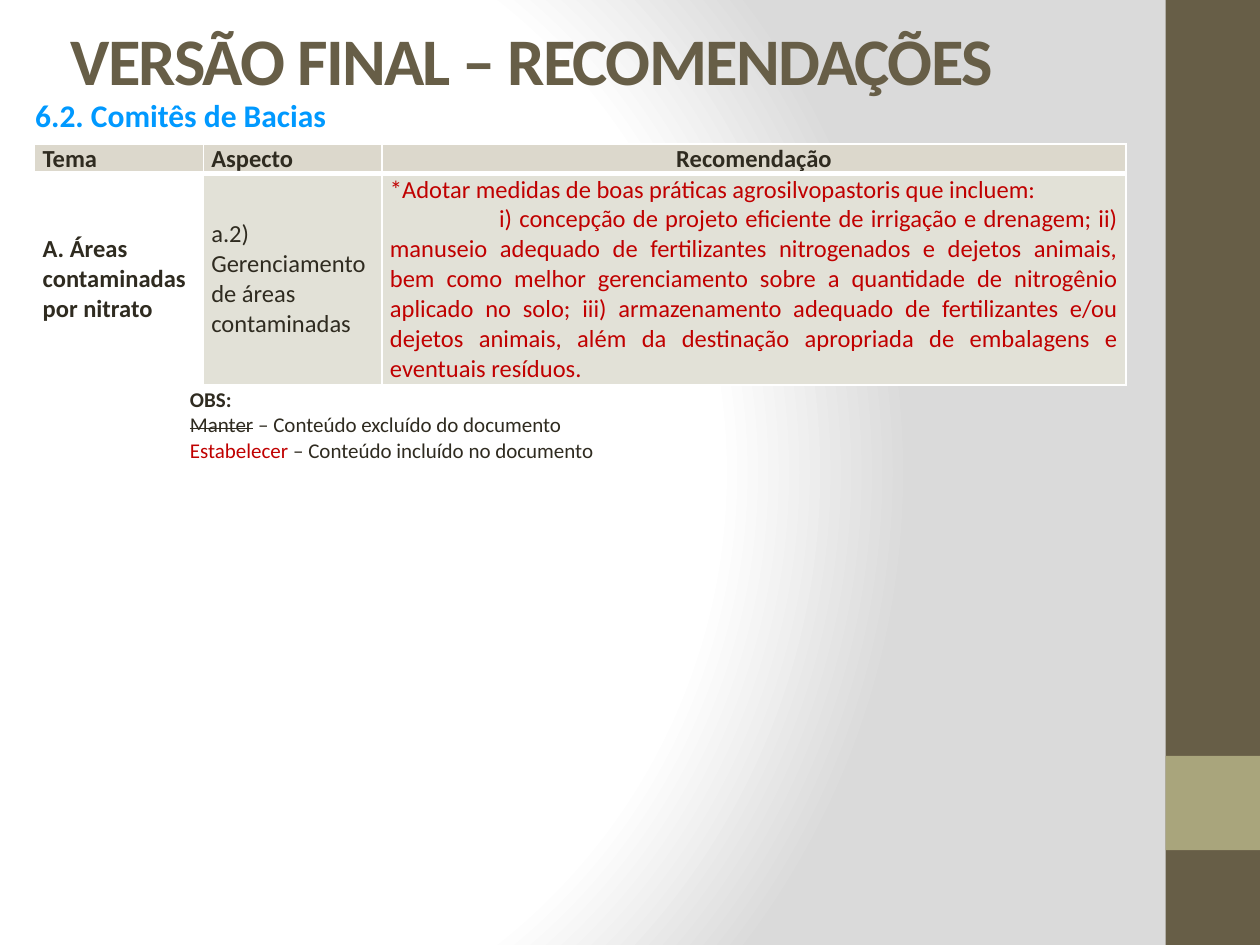
from dataclasses import dataclass

from lxml.etree import SubElement
from pptx import Presentation
from pptx.dml.color import RGBColor
from pptx.enum.shapes import MSO_SHAPE
from pptx.enum.text import MSO_ANCHOR, MSO_AUTO_SIZE, PP_ALIGN
from pptx.oxml import parse_xml
from pptx.oxml.ns import nsdecls, qn
from pptx.util import Cm, Pt


@dataclass(frozen=True)
class Theme:
    font: str = "Calibri"
    white: str = "FFFFFF"
    shade: str = "DADADA"
    brown: str = "675E47"
    olive: str = "A9A57C"
    blue: str = "0099FF"
    ink: str = "2F2B20"
    red: str = "C00000"
    header: str = "DCD8CC"
    band: str = "E2E1D7"
    title: int = 38
    subtitle: int = 18
    body: int = 14
    note: int = 12


class SlideBuilder:
    def __init__(self, s, theme):
        self.s = s
        self.theme = theme

    def background(self):
        t = self.theme
        self.s.background.fill.solid()
        bg = self.s.element.find(".//" + qn("p:bgPr"))
        stops = "".join(
            f'<a:gs pos="{pos * 1000}"><a:srgbClr val="{color}"/></a:gs>'
            for pos, color in ((0, t.white), (75, t.white), (100, t.shade))
        )
        bg.replace(bg[0], parse_xml(
            f'<a:gradFill {nsdecls("a")} rotWithShape="1"><a:gsLst>{stops}</a:gsLst>'
            '<a:path path="circle"><a:fillToRect l="20000" t="50000" r="100000" b="50000"/>'
            '</a:path></a:gradFill>'
        ))

    def format(self, r, size, color, bold=False):
        f = r.font
        f.name, f.size, f.bold = self.theme.font, Pt(size), bold
        f.color.rgb = RGBColor.from_string(color)

    def block(self, x, y, w, h, color):
        sp = self.s.shapes.add_shape(MSO_SHAPE.RECTANGLE, Cm(x), Cm(y), Cm(w), Cm(h))
        sp.shadow.inherit = False
        sp.fill.solid()
        sp.fill.fore_color.rgb = RGBColor.from_string(color)
        sp.line.fill.background()

    def title(self, text, x, y, w, h):
        sp = self.s.shapes.title
        sp.left, sp.top, sp.width, sp.height = Cm(x), Cm(y), Cm(w), Cm(h)
        tf = sp.text_frame
        tf.text = text
        tf.vertical_anchor = MSO_ANCHOR.MIDDLE
        p = tf.paragraphs[0]
        p.alignment = PP_ALIGN.LEFT
        r = p.runs[0]
        self.format(r, self.theme.title, self.theme.brown, True)
        r.font._element.set("spc", "-100")

    def text(self, lines, x, y, w, h, size):
        tf = self.s.shapes.add_textbox(Cm(x), Cm(y), Cm(w), Cm(h)).text_frame
        tf.word_wrap = True
        tf.auto_size = MSO_AUTO_SIZE.SHAPE_TO_FIT_TEXT
        for i, line in enumerate(lines):
            p = tf.add_paragraph() if i else tf.paragraphs[0]
            for text, color, bold, strike in line:
                r = p.add_run()
                r.text = text
                self.format(r, size, color, bold)
                if strike:
                    r.font._element.set("strike", "sngStrike")
        return tf

    def borders(self, cell, **widths):
        tc_pr = cell._tc.get_or_add_tcPr()
        for i, side in enumerate("LRTB"):
            ln = SubElement(tc_pr, qn("a:ln" + side), w=str(Pt(widths.get(side, 1))))
            fill = SubElement(ln, qn("a:solidFill"))
            SubElement(fill, qn("a:srgbClr"), val=self.theme.white)
            tc_pr.insert(i, ln)

    def cell(self, cell, text, fill, color, bold, align):
        cell.margin_left = cell.margin_right = Cm(0.16)
        cell.margin_top = cell.margin_bottom = 0
        if fill:
            cell.fill.solid()
            cell.fill.fore_color.rgb = RGBColor.from_string(fill)
        else:
            cell.fill.background()
        cell.text_frame.text = text
        for p in cell.text_frame.paragraphs:
            p.alignment = align
            self.format(p.runs[0], self.theme.body, color, bold)

    def table(self, header, row, x, y, widths, heights):
        t = self.theme
        tbl = self.s.shapes.add_table(
            2, len(widths), Cm(x), Cm(y), Cm(sum(widths)), Cm(sum(heights))
        ).table
        for column, w in zip(tbl.columns, widths):
            column.width = Cm(w)
        for line, h in zip(tbl.rows, heights):
            line.height = Cm(h)
        for c, (text, align) in enumerate(header):
            cell = tbl.cell(0, c)
            self.cell(cell, text, t.header, t.ink, True, align)
            self.borders(cell, B=3)
        for c, content in enumerate(row):
            cell = tbl.cell(1, c)
            self.cell(cell, *content)
            cell.vertical_anchor = MSO_ANCHOR.MIDDLE
            self.borders(cell, T=3)
        return tbl


def main():
    t = Theme()
    prs = Presentation()
    prs.slide_width, prs.slide_height = Cm(25.4), Cm(19.05)
    b = SlideBuilder(prs.slides.add_slide(prs.slide_layouts[5]), t)

    b.background()
    b.block(23.5, 0, 1.9, 19.05, t.brown)
    b.block(23.5, 15.24, 1.9, 1.9, t.olive)
    b.title("VERSÃO FINAL – RECOMENDAÇÕES", 1.17, 0, 24.71, 2.36)

    tf = b.text([[("6.2. Comitês de Bacias", t.blue, True, False)]],
                0.46, 1.85, 12.65, 1.07, t.subtitle)
    tf.vertical_anchor = MSO_ANCHOR.MIDDLE
    tf.margin_top, tf.margin_bottom = Cm(0.08), Cm(0.2)

    left, center, justify = PP_ALIGN.LEFT, PP_ALIGN.CENTER, PP_ALIGN.JUSTIFY
    measures = (
        "*Adotar medidas de boas práticas agrosilvopastoris que incluem:\n"
        "i) concepção de projeto eficiente de irrigação e drenagem; "
        "ii) manuseio adequado de fertilizantes nitrogenados e dejetos animais, "
        "bem como melhor gerenciamento sobre a quantidade de nitrogênio aplicado no solo; "
        "iii) armazenamento adequado de fertilizantes e/ou dejetos animais, "
        "além da destinação apropriada de embalagens e eventuais resíduos."
    )
    tbl = b.table(
        [("Tema", left), ("Aspecto", left), ("Recomendação", center)],
        [("A. Áreas contaminadas por nitrato", None, t.ink, True, left),
         ("a.2) Gerenciamento de áreas contaminadas", t.band, t.ink, False, left),
         (measures, t.band, t.red, False, justify)],
        0.7, 2.9, (3.4, 3.6, 15), (0.56, 4.27),
    )
    tbl.cell(1, 1).text_frame.paragraphs[0].space_after = Pt(6)
    p = tbl.cell(1, 2).text_frame.paragraphs[1]
    p._p.get_or_add_pPr().set("indent", str(Cm(2.2)))

    b.text(
        [[("OBS:", t.ink, True, False)],
         [("Manter", t.ink, False, True),
          (" – Conteúdo excluído do documento", t.ink, False, False)],
         [("Estabelecer", t.red, False, False),
          (" – Conteúdo incluído no documento", t.ink, False, False)]],
        3.58, 7.67, 15.19, 1.8, t.note,
    )
    prs.save("out.pptx")


if __name__ == "__main__":
    main()
